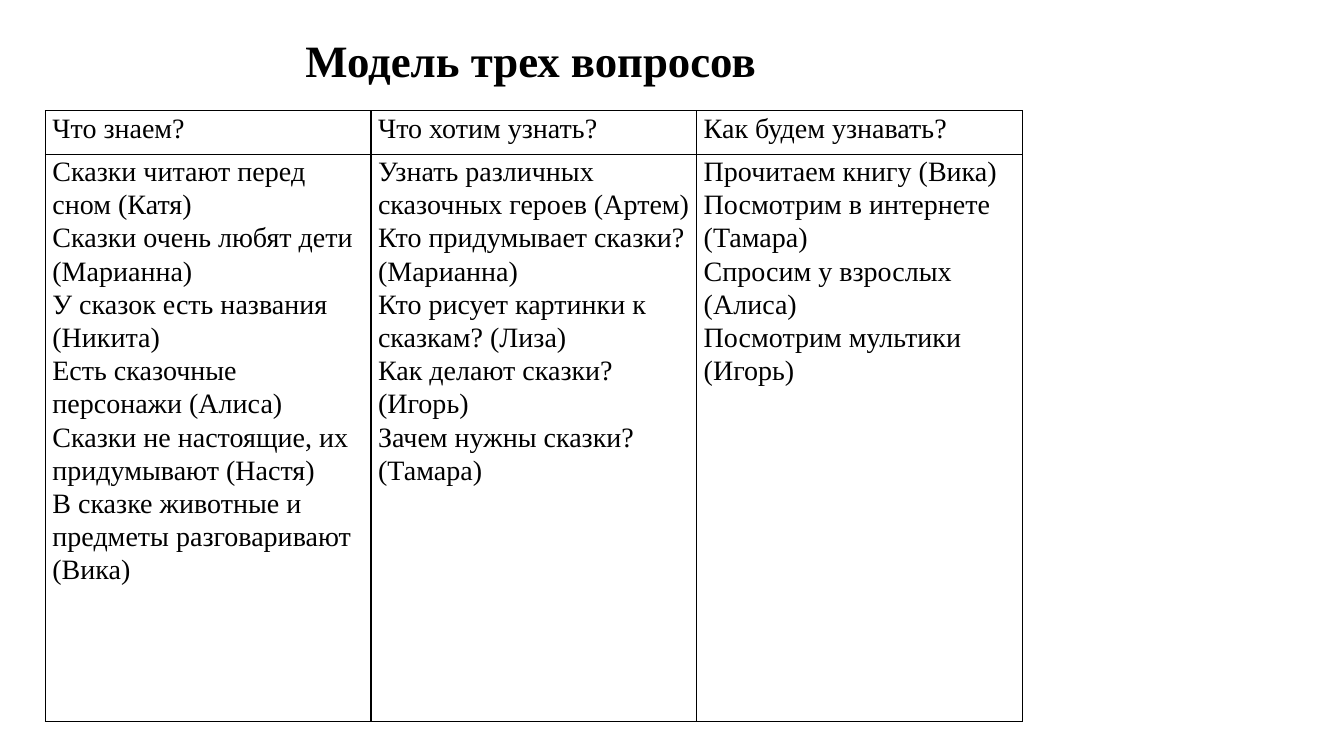
from lxml import etree
from pptx import Presentation
from pptx.dml.color import RGBColor
from pptx.enum.text import MSO_AUTO_SIZE
from pptx.oxml.ns import qn
from pptx.util import Inches, Pt

BLACK = RGBColor(0, 0, 0)
FONT = "Times New Roman"
FIT_SHAPE = MSO_AUTO_SIZE.SHAPE_TO_FIT_TEXT

COLUMNS = {
    "Что знаем?": [
        "Сказки читают перед сном (Катя)",
        "Сказки очень любят дети (Марианна)",
        "У сказок есть названия (Никита)",
        "Есть сказочные персонажи (Алиса)",
        "Сказки не настоящие, их придумывают (Настя)",
        "В сказке животные и предметы разговаривают (Вика)",
    ],
    "Что хотим узнать?": [
        "Узнать различных сказочных героев (Артем)",
        "Кто придумывает сказки? (Марианна)",
        "Кто рисует картинки к сказкам? (Лиза)",
        "Как делают сказки? (Игорь)",
        "Зачем нужны сказки? (Тамара)",
    ],
    "Как будем узнавать?": [
        "Прочитаем книгу (Вика)",
        "Посмотрим в интернете (Тамара)",
        "Спросим у взрослых (Алиса)",
        "Посмотрим мультики (Игорь)",
    ],
}


def style_text(para, size, bold=False):
    para.font.name = FONT
    para.font.size = Pt(size)
    para.font.bold = bold
    para.font.color.rgb = BLACK


def fill_cell(cell, lines):
    cell.margin_left = cell.margin_right = Inches(0.07)
    cell.margin_top = cell.margin_bottom = 0
    cell.text = "\n".join(lines)
    for para in cell.text_frame.paragraphs:
        para.line_spacing = 1.07
        style_text(para, 20)
    properties = cell._tc.get_or_add_tcPr()
    for side in ("lnL", "lnR", "lnT", "lnB"):
        border = etree.SubElement(properties, qn(f"a:{side}"), w=str(Pt(1)))
        solid = etree.SubElement(border, qn("a:solidFill"))
        etree.SubElement(solid, qn("a:srgbClr"), val=str(BLACK))
    cell.fill.background()


deck = Presentation()
deck.slide_width = Inches(13.33)
deck.slide_height = Inches(7.5)
page = deck.slides.add_slide(deck.slide_layouts[6])

table = page.shapes.add_table(
    2, len(COLUMNS), Inches(0.45), Inches(1.1), Inches(9.69), Inches(6.06)
).table
table.first_row = False
table.horz_banding = False
table.rows[0].height = Inches(0.43)
table.rows[1].height = Inches(5.63)

for index, (question, answers) in enumerate(COLUMNS.items()):
    table.columns[index].width = Inches(3.23)
    fill_cell(table.cell(0, index), [question])
    fill_cell(table.cell(1, index), answers)

title = page.shapes.add_textbox(Inches(2.93), Inches(0.28), Inches(4.71), Inches(0.64))
title.text_frame.word_wrap = False
title.text_frame.auto_size = FIT_SHAPE
title.text_frame.text = "Модель трех вопросов"
style_text(title.text_frame.paragraphs[0], 32, bold=True)

deck.save("out.pptx")
